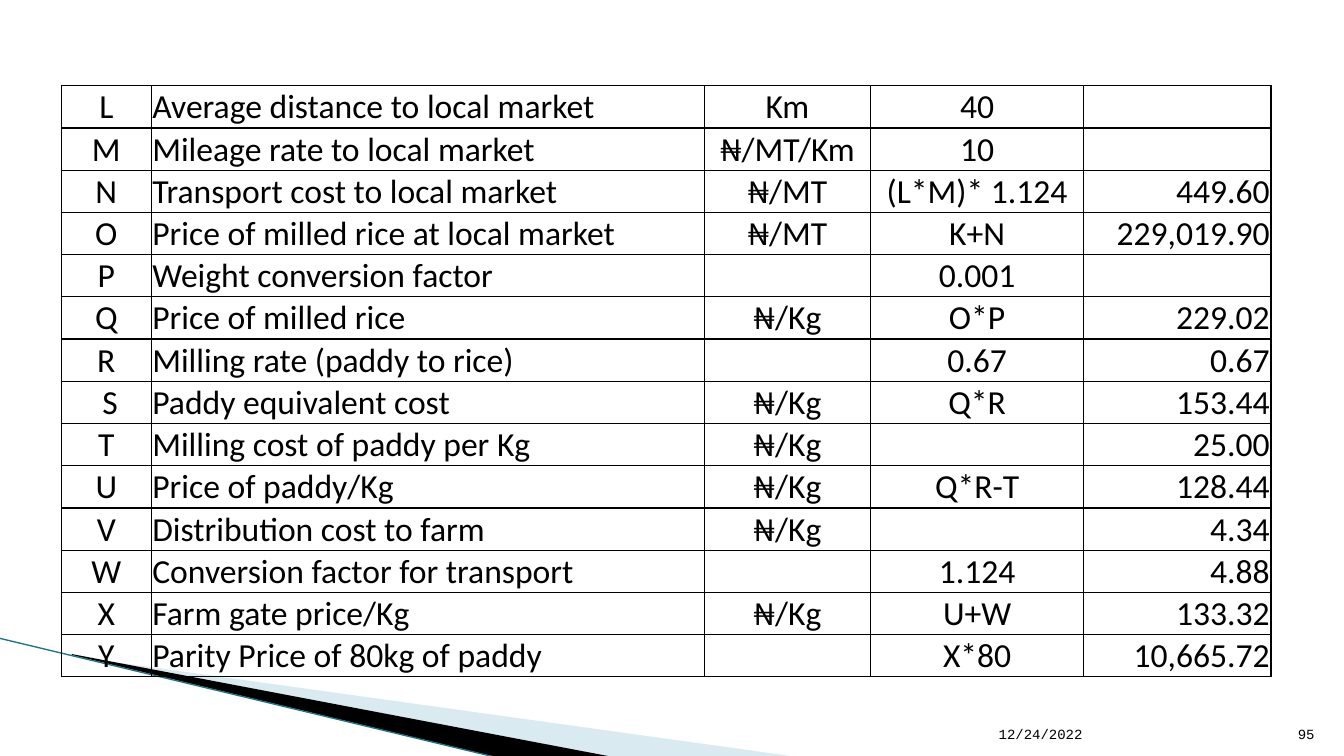
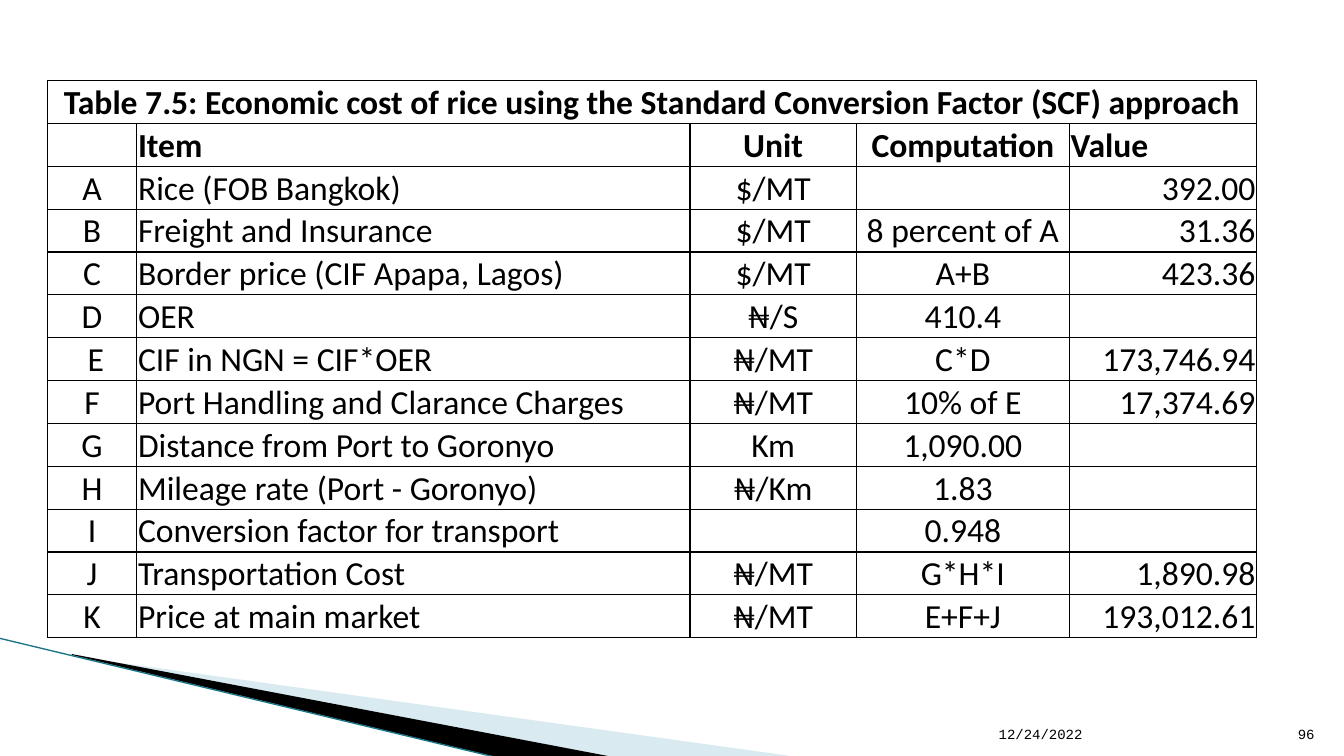
"""Build two slides of rice price tables over a shared corner decoration."""
from dataclasses import dataclass

from lxml.etree import SubElement
from pptx import Presentation
from pptx.dml.color import RGBColor
from pptx.enum.shapes import MSO_CONNECTOR
from pptx.enum.text import MSO_ANCHOR, PP_ALIGN
from pptx.oxml import parse_xml
from pptx.oxml.ns import nsdecls, qn
from pptx.util import Cm, Pt


@dataclass(frozen=True)
class Theme:
    ink: str = "000000"
    pale_band: str = "A0CBDC"
    edge: str = "1B7587"
    table_font: str = "Calibri"
    footer_font: str = "Courier New"
    table_size: int = 24
    footer_size: int = 10
    border_width: int = 1
    edge_width: float = 0.95


THEME = Theme()
LEFT, CENTER, RIGHT = PP_ALIGN.LEFT, PP_ALIGN.CENTER, PP_ALIGN.RIGHT


def write(frame, text, font, size, align=LEFT, bold=False):
    para = frame.paragraphs[0]
    para.alignment = align
    span = para.add_run()
    span.text = text
    span.font.name = font
    span.font.size = Pt(size)
    span.font.bold = bold
    span.font.color.rgb = RGBColor.from_string(THEME.ink)


deck = Presentation()
deck.slide_width, deck.slide_height = Cm(33.87), Cm(19.05)
layout = deck.slide_layouts[6]
for placeholder in list(layout.placeholders):
    layout.shapes.element.remove(placeholder.element)

COLUMN_WIDTHS = [2.26, 13.94, 4.19, 5.37, 4.72]
COLUMN_ALIGNS = [CENTER, LEFT, CENTER, CENTER, RIGHT]
HEADER_ALIGNS = [CENTER, LEFT, CENTER, CENTER, LEFT]

LOCAL_MARKET_ROWS = [
    ("L", "Average distance to local market", "Km", "40", ""),
    ("M", "Mileage rate to local market", "₦/MT/Km", "10", ""),
    ("N", "Transport cost to local market", "₦/MT", "(L*M)* 1.124", "449.60"),
    ("O", "Price of milled rice at local market", "₦/MT", "K+N", "229,019.90"),
    ("P", "Weight conversion factor", "", "0.001", ""),
    ("Q", "Price of milled rice", "₦/Kg", "O*P", "229.02"),
    ("R", "Milling rate (paddy to rice)", "", "0.67", "0.67"),
    (" S", "Paddy equivalent cost", "₦/Kg", "Q*R", "153.44"),
    ("T", "Milling cost of paddy per Kg", "₦/Kg", "", "25.00"),
    ("U", "Price of paddy/Kg", "₦/Kg", "Q*R-T", "128.44"),
    ("V", "Distribution cost to farm", "₦/Kg", "", "4.34"),
    ("W", "Conversion factor for transport", "", "1.124", "4.88"),
    ("X", "Farm gate price/Kg", "₦/Kg", "U+W", "133.32"),
    ("Y", "Parity Price of 80kg of paddy", "", "X*80", "10,665.72"),
]
MAIN_MARKET_ROWS = [
    ("Table 7.5: Economic cost of rice using the Standard Conversion Factor (SCF) approach",),
    ("", "Item", "Unit", "Computation", "Value"),
    ("A", "Rice (FOB Bangkok)", "$/MT", "", "392.00"),
    ("B", "Freight and Insurance", "$/MT", "8 percent of A", "31.36"),
    ("C", "Border price (CIF Apapa, Lagos)", "$/MT", "A+B", "423.36"),
    ("D", "OER", "₦/S", "410.4", ""),
    (" E", "CIF in NGN = CIF*OER", "₦/MT", "C*D", "173,746.94"),
    ("F", "Port Handling and Clarance Charges", "₦/MT", "10% of E", "17,374.69"),
    ("G", "Distance from Port to Goronyo", "Km", "1,090.00", ""),
    ("H", "Mileage rate (Port - Goronyo)", "₦/Km", "1.83", ""),
    ("I", "Conversion factor for transport", "", "0.948", ""),
    ("J", "Transportation Cost", "₦/MT", "G*H*I", "1,890.98"),
    ("K", "Price at main market", "₦/MT", "E+F+J", "193,012.61"),
]
PAGES = [
    ("95", LOCAL_MARKET_ROWS, 0, 1.55, 2.16, 1.06),
    ("96", MAIN_MARKET_ROWS, 2, 1.19, 2.03, 1.08),
]
BANDS = [
    (THEME.pale_band, 40, [(1.85, 16.54), (20.14, 19.08), (15.44, 19.08), (1.85, 16.51)]),
    (THEME.ink, 100, [(1.8, 16.48), (15.47, 19.08), (12.6, 19.1), (1.83, 16.51)]),
]

for number, rows, header_count, left, top, row_height in PAGES:
    page = deck.slides.add_slide(layout)

    if not layout.shapes:
        for color, opacity, corners in BANDS:
            points = [(Cm(x), Cm(y)) for x, y in corners]
            outline = page.shapes.build_freeform(*points[0])
            outline.add_line_segments(points[1:], close=True)
            band = outline.convert_to_shape()
            band.shadow.inherit = False
            band.fill.solid()
            band.fill.fore_color.rgb = RGBColor.from_string(color)
            band.line.fill.background()
            tint = band.element.spPr.find(qn("a:solidFill"))[0]
            SubElement(tint, qn("a:alpha"), val=str(opacity * 1000))
        edge = page.shapes.add_connector(
            MSO_CONNECTOR.STRAIGHT, Cm(-0.03), Cm(16.08), Cm(12.57), Cm(19.1))
        edge.line.color.rgb = RGBColor.from_string(THEME.edge)
        edge.line.width = Pt(THEME.edge_width)
        SubElement(edge.element.spPr, qn("a:effectLst"))
        for decoration in list(page.shapes):
            layout.shapes.element.append(decoration.element)

    table = page.shapes.add_table(
        len(rows), len(COLUMN_WIDTHS), Cm(left), Cm(top),
        Cm(sum(COLUMN_WIDTHS)), Cm(row_height * len(rows))).table
    table.first_row = table.horz_banding = False
    for column, width in zip(table.columns, COLUMN_WIDTHS):
        column.width = Cm(width)
    for row_index, values in enumerate(rows):
        table.rows[row_index].height = Cm(row_height)
        is_header = row_index < header_count
        aligns = HEADER_ALIGNS if is_header else COLUMN_ALIGNS
        for column_index, align in enumerate(aligns):
            cell = table.cell(row_index, column_index)
            cell.fill.background()
            cell.vertical_anchor = MSO_ANCHOR.BOTTOM
            cell.margin_left = cell.margin_right = cell.margin_top = Cm(0.03)
            cell.margin_bottom = 0
            for position, side in enumerate("LRTB"):
                cell._tc.get_or_add_tcPr().insert(position, parse_xml(
                    f'<a:ln{side} {nsdecls("a")} w="{Pt(THEME.border_width)}"><a:solidFill>'
                    f'<a:srgbClr val="{THEME.ink}"/></a:solidFill></a:ln{side}>'))
            if column_index < len(values) and values[column_index]:
                write(cell.text_frame, values[column_index], font=THEME.table_font,
                      size=THEME.table_size, align=align, bold=is_header)
        if len(values) == 1:
            table.cell(row_index, 0).merge(table.cell(row_index, len(COLUMN_WIDTHS) - 1))

    for text, box_left, box_width, align in [
        ("12/24/2022", 24.92, 7.11, LEFT),
        (number, 32.03, 1.35, RIGHT),
    ]:
        box = page.shapes.add_textbox(Cm(box_left), Cm(17.81), Cm(box_width), Cm(1.01))
        box.text_frame.word_wrap = True
        box.text_frame.vertical_anchor = MSO_ANCHOR.BOTTOM
        write(box.text_frame, text, font=THEME.footer_font, size=THEME.footer_size, align=align)

deck.save("out.pptx")
